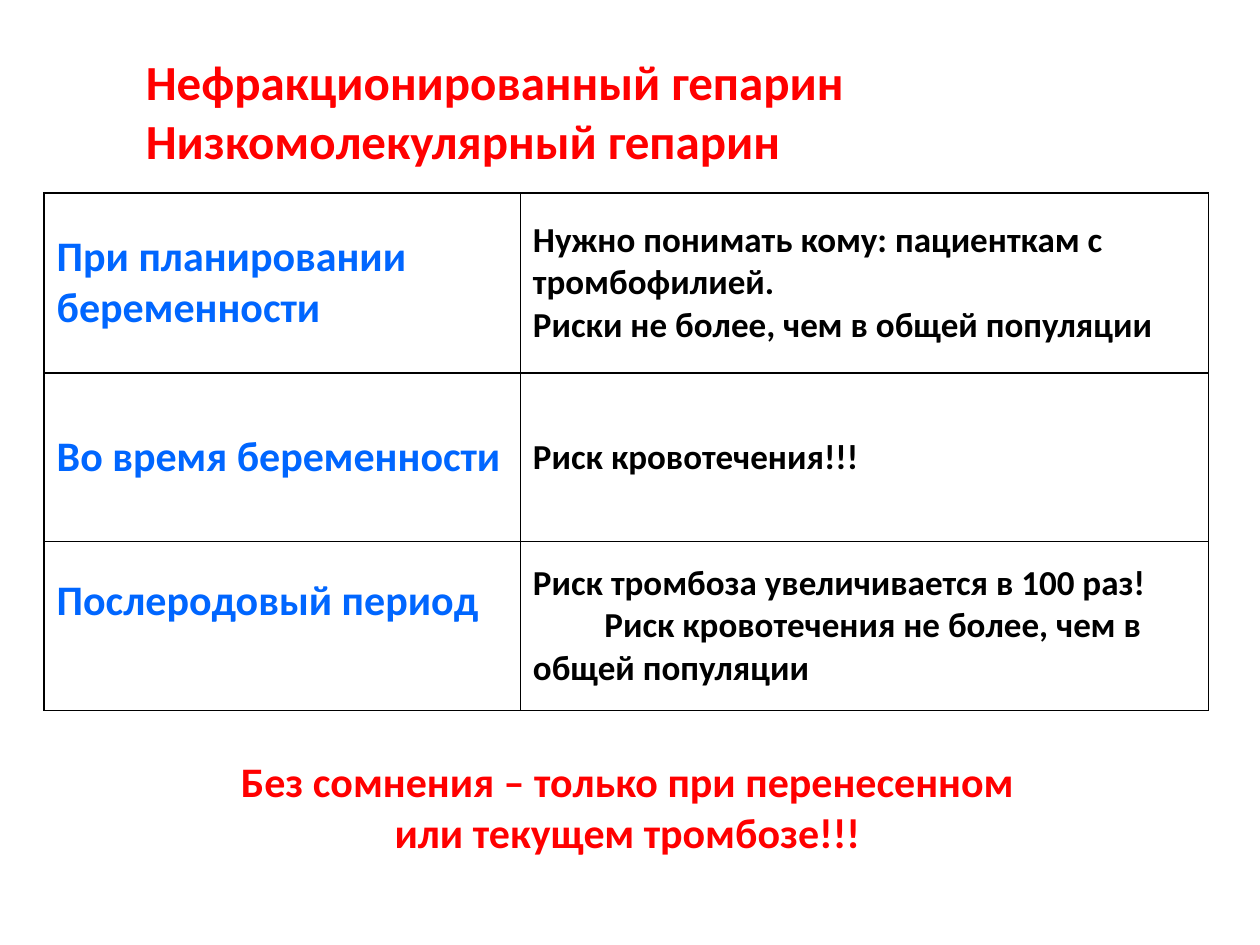
from lxml.etree import SubElement as Sub
from pptx import Presentation
from pptx.dml.color import RGBColor as Rgb
from pptx.enum.text import MSO_ANCHOR as Anchor, PP_ALIGN as Align
from pptx.oxml.ns import qn
from pptx.util import Cm, Pt

TITLE = ["Нефракционированный гепарин", "Низкомолекулярный гепарин"]
ROWS = [
    (["При планировании беременности"],
     ["Нужно понимать кому: пациенткам с тромбофилией.",
      "Риски не более, чем в общей популяции"]),
    (["Во время беременности"], ["Риск кровотечения!!!"]),
    (["Послеродовый период"],
     ["Риск тромбоза увеличивается в 100 раз!",
      "Риск кровотечения не более, чем в общей популяции"]),
]
NOTE = ["Без сомнения – только при перенесенном или текущем тромбозе!!!"]

THEME = {
    "font": "Calibri",
    "title": (28, "FF0000"),
    "stage": (24, "0066FF"),
    "risk": (20, "000000"),
    "note": (24, "FF0000"),
    "line": "000000",
}
WIDTHS = [9.6, 13.87]
HEIGHTS = [3.63, 3.4, 3.4]


def write(frame, lines, role, align=Align.LEFT):
    size, color = THEME[role]
    frame.word_wrap = True
    for i, line in enumerate(lines):
        para = frame.add_paragraph() if i else frame.paragraphs[0]
        para.text = line
        para.alignment = align
        font = para.font
        font.name, font.size, font.bold = THEME["font"], Pt(size), True
        font.color.rgb = Rgb.from_string(color)


def add_text(slide, box, *args):
    write(slide.shapes.add_textbox(*map(Cm, box)).text_frame, *args)


def rule(cell):
    """Draw a thin line on all four sides of the cell."""
    props = cell._tc.get_or_add_tcPr()
    for side in ("lnL", "lnR", "lnT", "lnB"):
        line = Sub(props, qn("a:" + side), w=str(Pt(1)))
        fill = Sub(line, qn("a:solidFill"))
        Sub(fill, qn("a:srgbClr"), val=THEME["line"])


def add_grid(slide):
    box = map(Cm, (0.89, 3.89, sum(WIDTHS), sum(HEIGHTS)))
    grid = slide.shapes.add_table(len(ROWS), len(WIDTHS), *box).table
    grid.first_row = grid.horz_banding = False
    for col, width in zip(grid.columns, WIDTHS):
        col.width = Cm(width)
    for row, height, texts in zip(grid.rows, HEIGHTS, ROWS):
        row.height = Cm(height)
        for cell, lines, role in zip(row.cells, texts, ("stage", "risk")):
            rule(cell)
            cell.fill.background()
            cell.vertical_anchor = Anchor.MIDDLE
            write(cell.text_frame, lines, role)
    stage, risk = grid.rows[len(ROWS) - 1].cells
    stage.margin_bottom = Cm(1.14)
    last = risk.text_frame.paragraphs[-1]
    last._p.get_or_add_pPr().set("indent", str(Cm(1.44)))


def main():
    deck = Presentation()
    deck.slide_width, deck.slide_height = Cm(25.4), Cm(19.05)
    slide = deck.slides.add_slide(deck.slide_layouts[6])
    add_text(slide, (2.69, 0.91, 17.6, 2.64), TITLE, "title")
    add_grid(slide)
    add_text(slide, (4.09, 15.11, 17.12, 2.31), NOTE, "note", Align.CENTER)
    deck.save("out.pptx")


if __name__ == "__main__":
    main()
